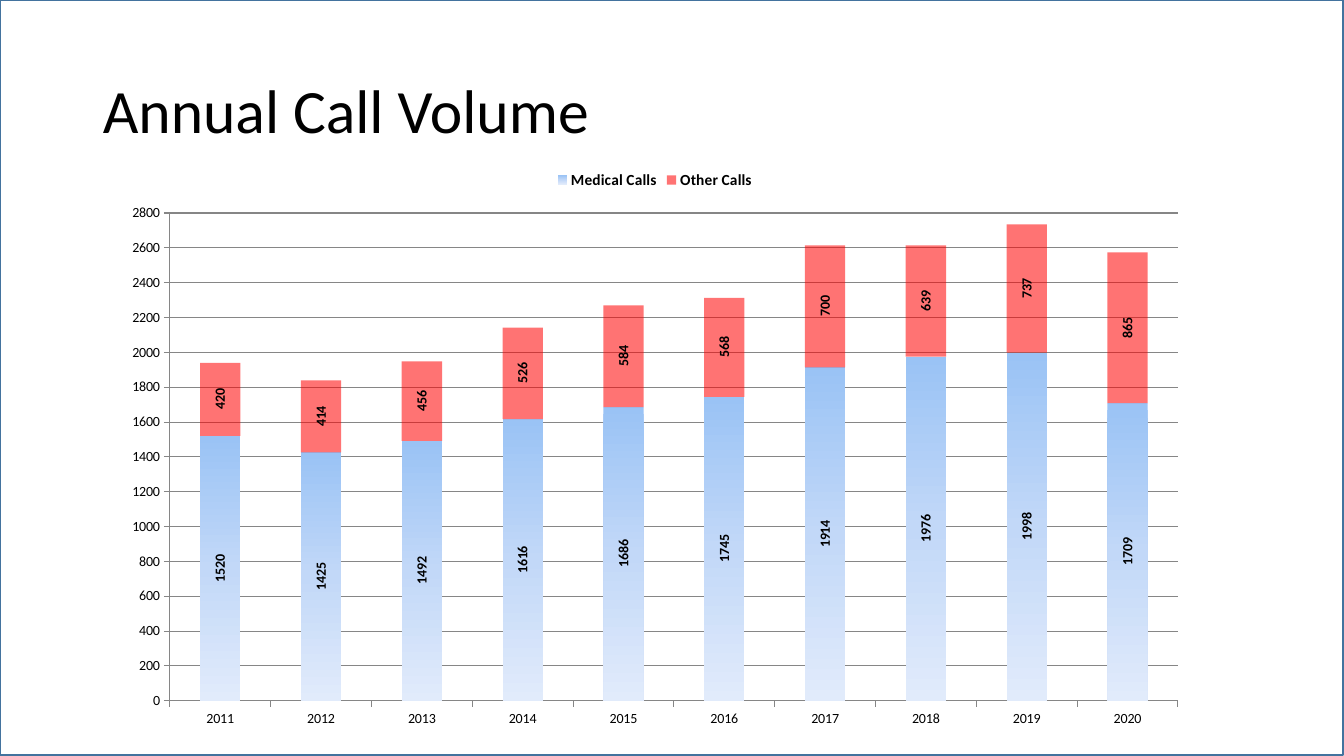
from lxml import etree
from pptx import Presentation
from pptx.chart.data import CategoryChartData
from pptx.dml.color import RGBColor
from pptx.enum.chart import XL_CHART_TYPE, XL_LABEL_POSITION, XL_LEGEND_POSITION, XL_TICK_MARK
from pptx.enum.shapes import MSO_SHAPE
from pptx.enum.text import MSO_ANCHOR
from pptx.oxml.ns import qn
from pptx.util import Inches, Pt

STACKED = XL_CHART_TYPE.COLUMN_STACKED
CENTER = XL_LABEL_POSITION.CENTER
TOP = XL_LEGEND_POSITION.TOP
OUTSIDE = XL_TICK_MARK.OUTSIDE
RECTANGLE = MSO_SHAPE.RECTANGLE
MIDDLE = MSO_ANCHOR.MIDDLE

TITLE = "Annual Call Volume"
YEARS = [str(year) for year in range(2011, 2021)]
CALLS = {
    "Medical Calls": [1520, 1425, 1492, 1616, 1686, 1745, 1914, 1976, 1998, 1709],
    "Other Calls": [420, 414, 456, 526, 584, 568, 700, 639, 737, 865],
}
COLORS = {"text": "000000", "paper": "FFFFFF", "frame": "43739E", "grid": "868686", "other": "FF0000"}
MEDICAL_GRADIENT = [(0, "9AC3F5"), (50, "C2D8F8"), (100, "E1EBFB")]
PLOT_LAYOUT = {"x": 0.055, "y": 0.093, "w": 0.925, "h": 0.843}
FONT = "Calibri"


def rgb(name):
    return RGBColor.from_string(COLORS[name])


def format_font(font, size, bold=False):
    font.name = FONT
    font.size = Pt(size)
    font.bold = bold
    font.color.rgb = rgb("text")


def write_text(shape, text, size, anchor=MIDDLE, line_spacing=0.9):
    frame = shape.text_frame
    frame.word_wrap = True
    frame.vertical_anchor = anchor
    para = frame.paragraphs[0]
    para.line_spacing = line_spacing
    span = para.add_run()
    span.text = text
    format_font(span.font, size)


def fill_solid(fill, name, element, opacity):
    """Fill with a colour; element is the XML owner of the fill."""
    fill.solid()
    fill.fore_color.rgb = rgb(name)
    color = element.find(".//" + qn("a:srgbClr"))
    etree.SubElement(color, qn("a:alpha"), val=str(opacity * 1000))


def fill_gradient(fill, element, stops):
    fill.gradient()
    fill.gradient_angle = 270
    stop_list = element.find(".//" + qn("a:gsLst"))
    for stop in list(stop_list):
        stop_list.remove(stop)
    for position, color in stops:
        stop = etree.SubElement(stop_list, qn("a:gs"), pos=str(position * 1000))
        etree.SubElement(stop, qn("a:srgbClr"), val=color)


def set_plot_layout(chart):
    area = chart._chartSpace.find(".//" + qn("c:plotArea"))
    for old in area.findall(qn("c:layout")):
        area.remove(old)
    layout = etree.Element(qn("c:layout"))
    area.insert(0, layout)
    manual = etree.SubElement(layout, qn("c:manualLayout"))
    settings = {"layoutTarget": "inner", "xMode": "edge", "yMode": "edge", **PLOT_LAYOUT}
    for tag, value in settings.items():
        etree.SubElement(manual, qn("c:" + tag), val=str(value))


def add_frame(page):
    frame = page.shapes.add_shape(RECTANGLE, 0, 0, Inches(13.32), Inches(7.49))
    frame.shadow.inherit = False
    fill_solid(frame.fill, "paper", frame.element.spPr, 78)
    frame.line.color.rgb = rgb("frame")
    frame.line.width = Pt(1)
    page.shapes.element.insert(2, frame.element)


def add_calls_chart(page):
    data = CategoryChartData()
    data.categories = YEARS
    for name, values in CALLS.items():
        data.add_series(name, values)
    chart = page.shapes.add_chart(
        STACKED, Inches(1.09), Inches(1.58), Inches(10.81), Inches(5.74), data).chart
    format_font(chart.font, 10)
    chart.has_title = False
    set_plot_layout(chart)

    chart.has_legend = True
    chart.legend.position = TOP
    chart.legend.include_in_layout = False
    format_font(chart.legend.font, 11, bold=True)

    for axis in (chart.category_axis, chart.value_axis):
        axis.major_tick_mark = OUTSIDE
        axis.format.line.color.rgb = rgb("grid")
        axis.format.line.width = Pt(0.75)
        format_font(axis.tick_labels.font, 10)
    values = chart.value_axis
    values.minimum_scale, values.maximum_scale, values.major_unit = 0, 2800, 200
    values.has_major_gridlines = True
    values.major_gridlines.format.line.color.rgb = rgb("grid")
    values.major_gridlines.format.line.width = Pt(0.75)
    values.tick_labels.number_format = "General"
    values.tick_labels.number_format_is_linked = False

    plot = chart.plots[0]
    plot.gap_width, plot.overlap = 150, 100
    plot.vary_by_categories = False
    medical, other = plot.series
    fill_gradient(medical.format.fill, medical._element, MEDICAL_GRADIENT)
    fill_solid(other.format.fill, "other", other._element, 55)
    for series in (medical, other):
        series.invert_if_negative = False
        labels = series.data_labels
        labels.show_value = True
        labels.position = CENTER
        format_font(labels.font, 10, bold=True)
        body = series._element.find(".//" + qn("a:bodyPr"))
        body.set("rot", "-5400000")
        body.set("vert", "horz")


def main():
    deck = Presentation()
    deck.slide_width, deck.slide_height = Inches(13.33), Inches(7.5)
    page = deck.slides.add_slide(deck.slide_layouts[5])
    add_frame(page)
    title = page.shapes.title
    title.left, title.top, title.width, title.height = (
        Inches(value) for value in (0.92, 0.4, 11.5, 1.45))
    write_text(title, TITLE, 44)
    title.text_frame.paragraphs[0].alignment = LEFT
    add_calls_chart(page)
    deck.save("out.pptx")


from pptx.enum.text import PP_ALIGN

LEFT = PP_ALIGN.LEFT

if __name__ == "__main__":
    main()
